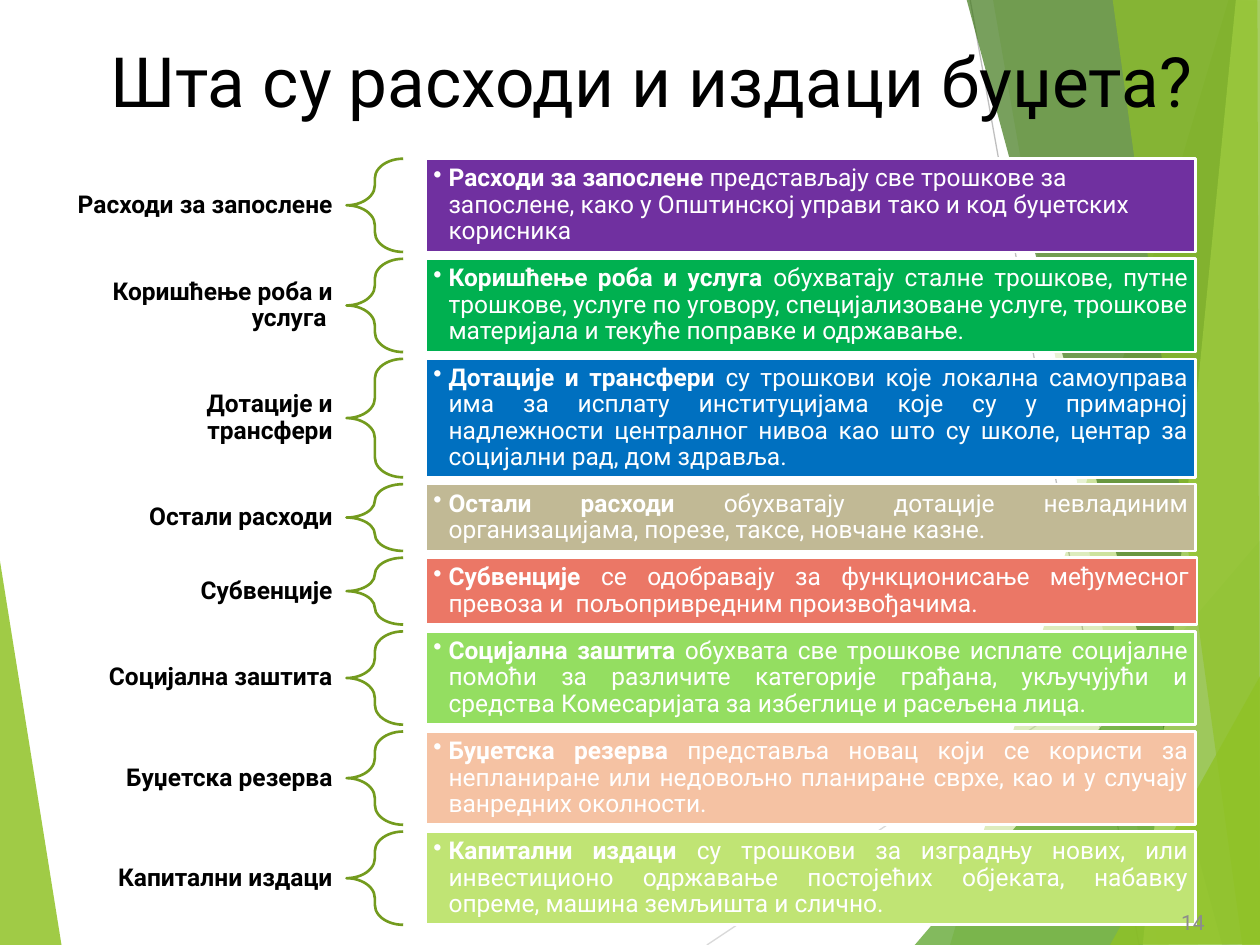
from lxml import etree
from pptx import Presentation
from pptx.dml.color import RGBColor
from pptx.enum.shapes import MSO_CONNECTOR as Connector, MSO_SHAPE as Shape
from pptx.enum.text import MSO_ANCHOR as Anchor, PP_ALIGN as Align
from pptx.oxml.ns import qn
from pptx.util import Inches, Pt


def paint(target, color, opacity=100):
    """Give a fill or a line format a solid colour."""
    fill = getattr(target, "fill", target)
    fill.solid()
    fill.fore_color.rgb = RGBColor.from_string(color)
    if opacity < 100:
        tint = fill._xPr.find(".//" + qn("a:srgbClr"))
        etree.SubElement(tint, qn("a:alpha")).set("val", str(opacity * 1000))


def write(shape, spans, size, color, align, margins=(0.1, 0.05), spacing=1):
    """Fill a shape with one paragraph of (text, bold) spans."""
    frame = shape.text_frame
    side, edge = (Inches(margin) for margin in margins)
    layout = {
        "word_wrap": True, "vertical_anchor": Anchor.MIDDLE,
        "margin_left": side, "margin_right": side,
        "margin_top": edge, "margin_bottom": edge,
    }
    for name, value in layout.items():
        setattr(frame, name, value)
    para = frame.paragraphs[0]
    para.alignment = align
    para.line_spacing = spacing
    for text, bold in spans:
        span = para.add_run()
        span.text = text
        for name, value in {"name": "Roboto", "size": Pt(size), "bold": bold}.items():
            setattr(span.font, name, value)
        paint(span.font, color)
    return para


deck = Presentation()
deck.slide_width, deck.slide_height = Inches(10), Inches(7.5)
page = deck.slides.add_slide(deck.slide_layouts[6])
shapes = page.shapes

# Background: thin lines, then translucent facets
for x1, y1, x2, y2, color in [
    (5.61, 7.5, 10.01, 4.57, "D9D9D9"),
    (7.7, 0, 9.04, 7.5, "BFBFBF"),
]:
    ray = shapes.add_connector(
        Connector.STRAIGHT, Inches(x1), Inches(y1), Inches(x2), Inches(y2))
    paint(ray.line, color)
    ray.line.width = Pt(0.75)
    etree.SubElement(ray._element.spPr, qn("a:effectLst"))

facets = [
    ("90C226", 85, [(-0.01, 4.39), (0.49, 7.51), (-0.01, 7.5)]),
    ("90C226", 30, [(9.75, 0), (7.54, 7.5), (10.02, 7.51), (10.01, 0.01)]),
    ("90C226", 20, [(7.88, -0.01), (9.19, 7.5), (10.01, 7.5), (10.01, -0.01)]),
    ("54A021", 72, [(7.26, 7.5), (10, 4.29), (10.01, 7.5)]),
    ("3F7819", 70, [(7.67, -0.01), (9.7, 7.5), (10.01, 7.49), (10.01, -0.01)]),
    ("C0E474", 70, [(9.81, -0.01), (9.07, 7.5), (10.01, 7.5), (10, -0.01)]),
    ("90C226", 65, [(8.83, -0.01), (9.86, 7.5), (10, 7.5), (9.98, -0.01)]),
    ("90C226", 80, [(8.81, 7.5), (10.01, 5.35), (10.01, 7.49)]),
]
for color, opacity, corners in facets:
    start, *others = [(Inches(x), Inches(y)) for x, y in corners]
    builder = shapes.build_freeform(*start)
    builder.add_line_segments(others, close=True)
    facet = builder.convert_to_shape()
    facet.shadow.inherit = False
    paint(facet.fill, color, opacity)
    facet.line.fill.background()

# Title
title = shapes.add_textbox(Inches(0.67), Inches(0.29), Inches(9), Inches(0.68))
write(title, [("Шта су расходи и издаци буџета?", False)], 39.6, "000000", Align.CENTER)

# Expense rows: label, bold lead, description, bar colour, lines of text
rows = [
    ("Расходи за запослене", "Расходи за запослене ",
     "представљају све трошкове за запослене, како у Општинској управи "
     "тако и код буџетских корисника", "7030A0", 3),
    ("Коришћење роба и услуга ", "Коришћење роба и услуга ",
     "обухватају сталне трошкове, путне трошкове, услуге по уговору, "
     "специјализоване услуге, трошкове материјала и текуће поправке и одржавање.",
     "00B050", 3),
    ("Дотације и трансфери", "Дотације и трансфери ",
     "су трошкови које локална самоуправа има за исплату институцијама које су "
     "у примарној надлежности централног нивоа као што су школе, центар за "
     "социјални рад, дом здравља. ", "0070C0", 4),
    ("Остали расходи", "Остали расходи ",
     "обухватају дотације невладиним организацијама, порезе, таксе, новчане казне.",
     "C1B995", 2),
    ("Субвенције", "Субвенције",
     " сe одобравају за функционисање међумесног превоза и  пољопривредним "
     "произвођачима. ", "EB7766", 2),
    ("Социјална заштита", "Социјална заштита ",
     "обухвата све трошкове исплате социјалне помоћи за различите категорије "
     "грађана, укључујући и средства Комесаријата за избеглице и расељена лица.",
     "94DE61", 3),
    ("Буџетска резерва", "Буџетска резерва ",
     "представља новац који се користи за непланиране или недовољно планиране "
     "сврхе, као и у случају ванредних околности.", "F5C2A3", 3),
    ("Капитални издаци", "Капитални издаци ",
     "су трошкови за изградњу нових, или инвестиционо одржавање постојећих "
     "објеката, набавку опреме, машина земљишта и слично.", "C0E474", 3),
]
bar_heights = {2: Inches(0.53), 3: Inches(0.74), 4: Inches(0.94)}
heights = [bar_heights[row[-1]] for row in rows]
gap = (Inches(6.08) - sum(heights)) // (len(rows) - 1)
top = Inches(1.26)

for index, (label, lead, description, color, _) in enumerate(rows):
    height = heights[index]

    # Label centred on the bar
    label_height = Inches(0.49 if index < 3 else 0.3)
    box = shapes.add_textbox(
        Inches(0.5), top + (height - label_height) // 2, Inches(2.25), label_height)
    write(box, [(label, True)], 14, "000000", Align.RIGHT, (0.11, 0.04), 0.9)

    # Brace
    brace = shapes.add_shape(Shape.LEFT_BRACE, Inches(2.75), top, Inches(0.45), height)
    brace.shadow.inherit = False
    brace.adjustments[0] = 0.35
    brace.fill.background()
    paint(brace.line, "739B1E")
    brace.line.width = Pt(1.5)

    # Bar with a bulleted description
    width = Inches(6.12 if label == "Субвенције" else 6.11)
    bar = shapes.add_shape(Shape.RECTANGLE, Inches(3.38), top, width, height)
    bar.shadow.inherit = False
    paint(bar.fill, color)
    paint(bar.line, "FFFFFF")
    bar.line.width = Pt(1.5)
    align = Align.JUSTIFY if index else Align.LEFT
    para = write(bar, [(lead, True), (description, False)], 14, "FFFFFF",
                 align, (0.06, 0.06), 0.9)
    properties = para._p.get_or_add_pPr()
    properties.set("marL", str(Inches(0.12)))
    properties.set("indent", str(-Inches(0.12)))
    etree.SubElement(properties, qn("a:buChar")).set("char", "•")

    top += height + gap

# Page number
number = shapes.add_textbox(Inches(7.33), Inches(7.12), Inches(2.33), Inches(0.4))
write(number, [("14", False)], 12, "8C8C8C", Align.RIGHT)

deck.save("out.pptx")
